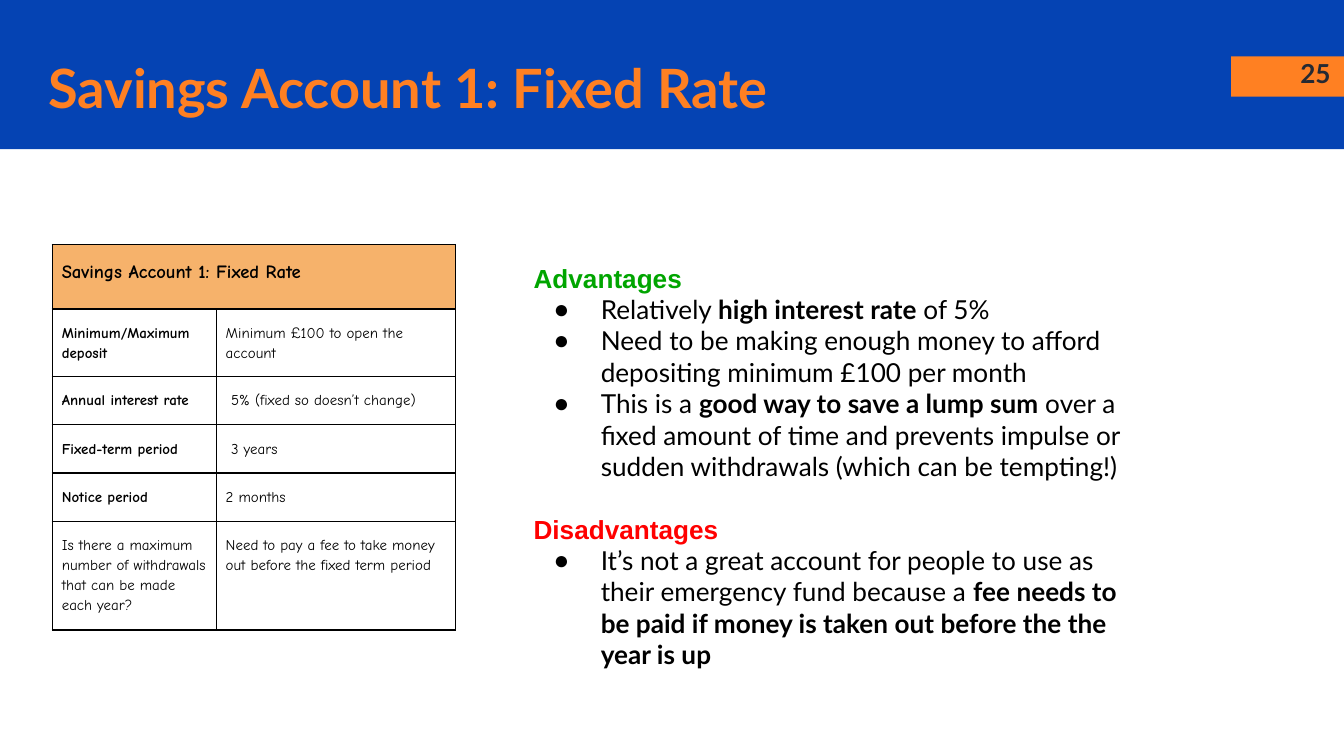
from dataclasses import dataclass
from lxml.etree import SubElement
from pptx import Presentation
from pptx.dml.color import RGBColor
from pptx.enum.shapes import MSO_SHAPE
from pptx.enum.text import MSO_ANCHOR, MSO_AUTO_SIZE, PP_ALIGN
from pptx.oxml.ns import qn
from pptx.util import Inches, Pt


@dataclass(frozen=True)
class Theme:
    blue: str = "0543B3"
    orange: str = "FF8022"
    slate: str = "262A33"
    peach: str = "F6B26B"
    green: str = "00A500"
    red: str = "FF0000"
    black: str = "000000"
    sans: str = "Lato"
    head: str = "Arial"
    comic: str = "Comic Neue"
    title: int = 29
    text: int = 14
    label: int = 10
    small: int = 8


THEME = Theme()
NAME = "Savings Account 1: Fixed Rate"
TERMS = [
    ("Minimum/Maximum deposit", "Minimum £100 to open the account", 0.5),
    ("Annual interest rate", "5% (fixed so doesn’t change)", 0.36),
    ("Fixed-term period", "3 years", 0.36),
    ("Notice period", "2 months", 0.36),
    ("Is there a maximum number of withdrawals that can be made each year?",
     "Need to pay a fee to take money out before the fixed term period", 0.81),
]
INSET = {"Annual interest rate", "Fixed-term period"}
POINTS = [
    ("Advantages", THEME.green, [
        ["Relatively ", "high interest rate", " of 5%"],
        ["Need to be making enough money to afford depositing minimum £100 per month"],
        ["This is a ", "good way to save a lump sum",
         " over a fixed amount of time and prevents impulse or sudden "
         "withdrawals (which can be tempting!)"],
    ]),
    ("Disadvantages", THEME.red, [
        ["It’s not a great account for people to use as their emergency fund because a ",
         "fee needs to be paid if money is taken out before the the year is up"],
    ]),
]


def apply(item, values):
    for key, value in values.items():
        setattr(item, key, value)


def place(shape, box):
    apply(shape, dict(zip(("left", "top", "width", "height"), map(Inches, box))))


def write(para, text, face, size, color, bold=False):
    run = para.add_run()
    run.text = text
    apply(run.font, {"name": face, "size": Pt(size), "bold": bold})
    run.font.color.rgb = RGBColor.from_string(color)


def frame(shape):
    text = shape.text_frame
    pad = Inches(0.1)
    apply(text, {
        "word_wrap": True, "auto_size": MSO_AUTO_SIZE.NONE,
        "vertical_anchor": MSO_ANCHOR.TOP,
        "margin_left": pad, "margin_right": pad,
        "margin_top": pad, "margin_bottom": pad,
    })
    return text


def block(slide, box, color):
    shape = slide.shapes.add_shape(MSO_SHAPE.RECTANGLE, *map(Inches, box))
    shape.shadow.inherit = False
    shape.fill.solid()
    shape.fill.fore_color.rgb = RGBColor.from_string(color)
    shape.line.fill.background()
    slide.shapes.title.element.addprevious(shape.element)


def header(slide, box):
    left, top, width, height = box
    block(slide, box, THEME.blue)
    block(slide, (left + width - 0.84, top + 0.42, 0.84, 0.3), THEME.orange)

    title = slide.shapes.title
    place(title, (left + 0.26, top + 0.23, 7.61, 0.69))
    para = frame(title).paragraphs[0]
    apply(para, {"alignment": PP_ALIGN.LEFT, "line_spacing": 1.15})
    write(para, NAME, THEME.sans, THEME.title, THEME.orange, True)

    spot = (left + width - 0.6, top + 0.33, 0.6, 0.43)
    page = slide.shapes.add_textbox(*map(Inches, spot))
    para = frame(page).paragraphs[0]
    para.alignment = PP_ALIGN.RIGHT
    write(para, "25", THEME.sans, THEME.text, THEME.slate, True)


def border(cell):
    props = cell._tc.get_or_add_tcPr()
    for side in ("lnL", "lnR", "lnT", "lnB"):
        line = SubElement(props, qn(f"a:{side}"), w=str(Pt(1)))
        fill = SubElement(line, qn("a:solidFill"))
        SubElement(fill, qn("a:srgbClr"), val=THEME.black)


def entry(cell, text, size, bold, fill=None, inset=0):
    apply(cell, {
        "margin_left": Inches(0.07 + inset), "margin_right": Inches(0.07),
        "margin_top": Inches(0.1), "margin_bottom": Inches(0.1),
    })
    border(cell)
    if fill:
        cell.fill.solid()
        cell.fill.fore_color.rgb = RGBColor.from_string(fill)
    else:
        cell.fill.background()
    para = cell.text_frame.paragraphs[0]
    para.line_spacing = 1.15
    if text:
        write(para, text, THEME.comic, size, THEME.black, bold)


def terms(slide, box):
    grid = slide.shapes.add_table(len(TERMS) + 1, 2, *map(Inches, box)).table
    apply(grid, {"first_row": False, "horz_banding": False})
    for col, width in zip(grid.columns, (1.22, box[2] - 1.22)):
        col.width = Inches(width)
    grid.rows[0].height = Inches(0.48)
    grid.cell(0, 0).merge(grid.cell(0, 1))
    entry(grid.cell(0, 0), NAME, THEME.label, True, THEME.peach)
    entry(grid.cell(0, 1), "", THEME.label, True, THEME.peach)
    for row, (label, value, height) in enumerate(TERMS, 1):
        grid.rows[row].height = Inches(height)
        entry(grid.cell(row, 0), label, THEME.small, row < len(TERMS))
        entry(grid.cell(row, 1), value, THEME.small, False,
              inset=0.04 if label in INSET else 0)


def bullet(para, mark):
    props = para._p.get_or_add_pPr()
    apart = {"marL": 0.5, "indent": -0.35} if mark else {"marL": 0, "indent": 0}
    for key, value in apart.items():
        props.set(key, str(Inches(value)))
    if mark:
        color = SubElement(props, qn("a:buClr"))
        SubElement(color, qn("a:srgbClr"), val=THEME.black)
        SubElement(props, qn("a:buChar"), char=mark)
    else:
        SubElement(props, qn("a:buNone"))


def points(slide, box):
    body = slide.placeholders[1]
    place(body, box)
    text = frame(body)
    for index, (name, color, items) in enumerate(POINTS):
        para = text.add_paragraph() if index else text.paragraphs[0]
        bullet(para, None)
        para.space_before = Pt(16.8 if index else 0)
        write(para, name, THEME.head, THEME.text, color, True)
        for item in items:
            para = text.add_paragraph()
            bullet(para, "●")
            para.space_before = Pt(0)
            for part, words in enumerate(item):
                write(para, words, THEME.sans, THEME.text, THEME.black, part % 2 == 1)


def main():
    deck = Presentation()
    wide = Inches(10)
    apply(deck, {"slide_width": wide, "slide_height": wide * 9 // 16})
    slide = deck.slides.add_slide(deck.slide_layouts[1])
    header(slide, (0, 0, 10, 1.11))
    terms(slide, (0.39, 1.82, 3, 2.87))
    points(slide, (3.87, 1.85, 4.79, 3.03))
    deck.save("out.pptx")


if __name__ == "__main__":
    main()
